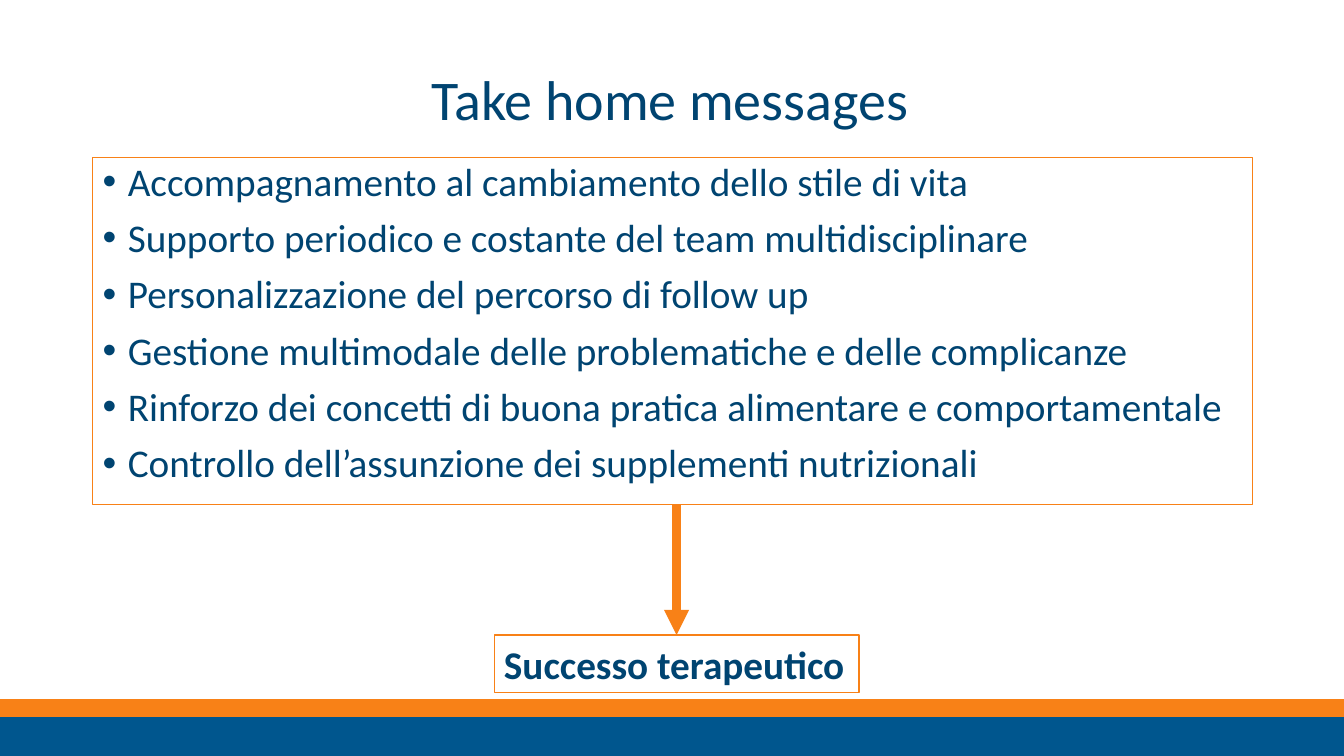
import pptx
import pptx.util
import pptx.dml.color
import pptx.enum.shapes
import pptx.enum.text
import pptx.oxml.ns
from dataclasses import dataclass
from lxml import etree
from pptx.util import Inches

# Content
TITLE = "Take home messages"
MESSAGES = [
    "Accompagnamento al cambiamento dello stile di vita",
    "Supporto periodico e costante del team multidisciplinare",
    "Personalizzazione del percorso di follow up",
    "Gestione multimodale delle problematiche e delle complicanze",
    "Rinforzo dei concetti di buona pratica alimentare e comportamentale",
    "Controllo dell’assunzione dei supplementi nutrizionali",
]
OUTCOME = "Successo terapeutico"

# Layout: left, top, width, height in inches
SLIDE = (13.33, 7.5)
TITLE_AREA = (4.18, 0.59, 4.98, 0.77)
MESSAGE_AREA = (0.92, 1.56, 11.5, 3.45)
OUTCOME_AREA = (4.9, 6.3, 3.62, 0.57)
BLUE_BAND = (0, 7.1, SLIDE[0], 0.4)
ORANGE_BAND = (0, 6.94, SLIDE[0], 0.17)
BULLET_INDENT = 0.25


@dataclass(frozen=True)
class Theme:
    font: str = "Calibri"
    text: str = "004471"
    orange: str = "F88117"
    blue: str = "00568E"
    title_size: int = 40
    body_size: int = 28
    frame_line: float = 0.75
    band_line: float = 1
    arrow_line: float = 6


THEME = Theme()


def color(value):
    return pptx.dml.color.RGBColor.from_string(value)


def add_box(page, area, line, width, fill=None):
    box = page.shapes.add_shape(
        pptx.enum.shapes.MSO_SHAPE.RECTANGLE, *map(Inches, area))
    box.shadow.inherit = False
    if fill:
        box.fill.solid()
        box.fill.fore_color.rgb = color(fill)
    else:
        box.fill.background()
    box.line.color.rgb = color(line)
    box.line.width = pptx.util.Pt(width)
    return box


def write(box, lines, size, bold=False):
    frame = box.text_frame
    frame.text = "\n".join(lines)
    frame.word_wrap = True
    frame.vertical_anchor = pptx.enum.text.MSO_ANCHOR.TOP
    for para in frame.paragraphs:
        para.alignment = pptx.enum.text.PP_ALIGN.LEFT
        for span in para.runs:
            span.font.name = THEME.font
            span.font.size = pptx.util.Pt(size)
            span.font.bold = bold
            span.font.color.rgb = color(THEME.text)


def add_bullet(para):
    para.line_spacing = 0.9
    para.space_before = pptx.util.Pt(10)
    properties = para._p.get_or_add_pPr()
    properties.set("marL", str(Inches(BULLET_INDENT)))
    properties.set("indent", str(-Inches(BULLET_INDENT)))
    font = etree.SubElement(properties, pptx.oxml.ns.qn("a:buFont"))
    font.set("typeface", "Arial")
    bullet = etree.SubElement(properties, pptx.oxml.ns.qn("a:buChar"))
    bullet.set("char", "•")


def add_arrow(page, top, target):
    center = target.left + target.width // 2
    arrow = page.shapes.add_connector(
        pptx.enum.shapes.MSO_CONNECTOR.STRAIGHT, center, top, center, target.top)
    arrow.end_connect(target, 0)
    arrow.line.color.rgb = color(THEME.orange)
    arrow.line.width = pptx.util.Pt(THEME.arrow_line)
    head = etree.SubElement(arrow.line._get_or_add_ln(), pptx.oxml.ns.qn("a:tailEnd"))
    head.set("type", "triangle")
    etree.SubElement(arrow._element.spPr, pptx.oxml.ns.qn("a:effectLst"))


def main():
    deck = pptx.Presentation()
    deck.slide_width, deck.slide_height = map(Inches, SLIDE)
    page = deck.slides.add_slide(deck.slide_layouts[6])

    # Title
    title = page.shapes.add_textbox(*map(Inches, TITLE_AREA))
    write(title, [TITLE], THEME.title_size)

    # Framed messages
    messages = add_box(page, MESSAGE_AREA, THEME.orange, THEME.frame_line)
    write(messages, MESSAGES, THEME.body_size)
    for para in messages.text_frame.paragraphs:
        add_bullet(para)

    # Outcome and the arrow leading to it
    outcome = add_box(page, OUTCOME_AREA, THEME.orange, THEME.frame_line)
    write(outcome, [OUTCOME], THEME.body_size, bold=True)
    add_arrow(page, messages.top + messages.height, outcome)

    # Footer bands
    for area, shade in ((BLUE_BAND, THEME.blue), (ORANGE_BAND, THEME.orange)):
        add_box(page, area, shade, THEME.band_line, fill=shade)

    deck.save("out.pptx")


if __name__ == "__main__":
    main()
